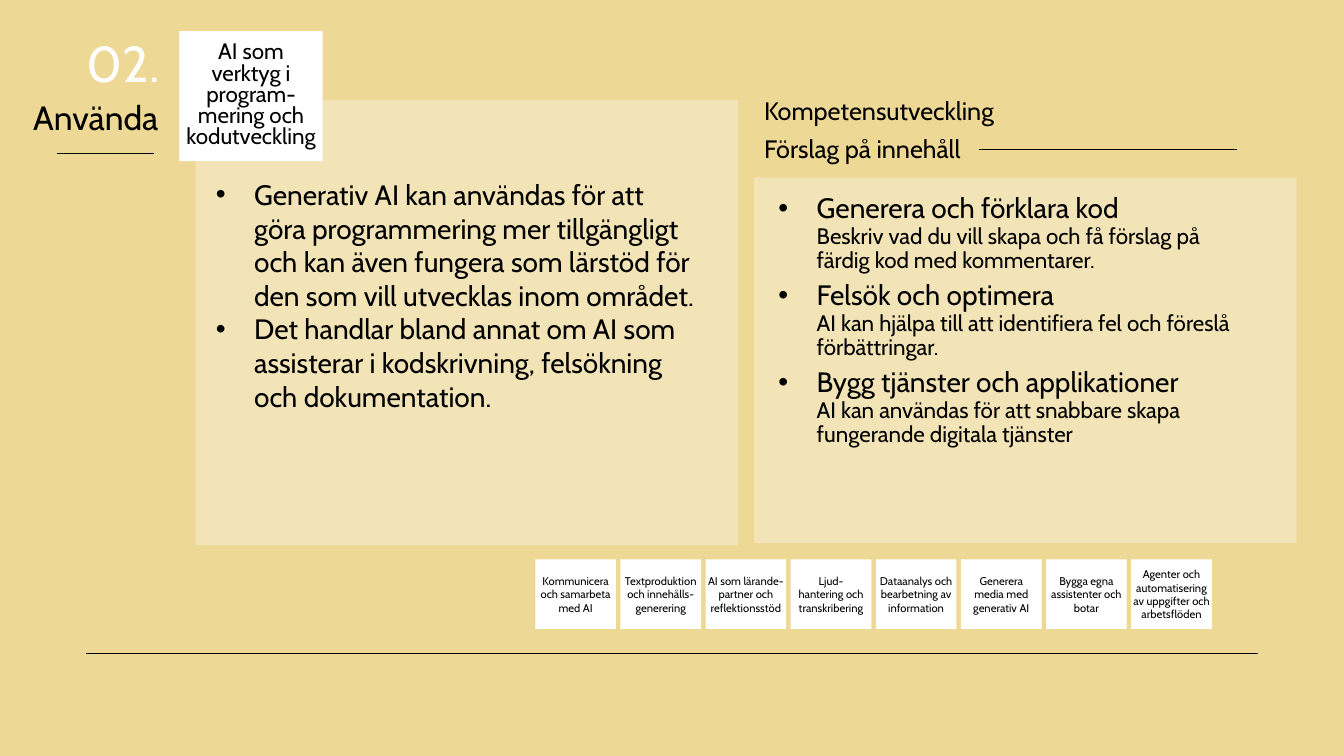
from copy import deepcopy

from lxml.etree import SubElement
from pptx import Presentation
from pptx.dml.color import RGBColor
from pptx.enum.shapes import MSO_CONNECTOR, MSO_SHAPE
from pptx.enum.text import MSO_ANCHOR, MSO_AUTO_SIZE, PP_ALIGN
from pptx.oxml.ns import qn
from pptx.util import Inches, Pt

SAND = RGBColor(0xED, 0xD8, 0x96)
WHITE = RGBColor(0xFF, 0xFF, 0xFF)
BLACK = RGBColor(0x00, 0x00, 0x00)
FONT = "Cabin"

USES = [
    "Generativ AI kan användas för att göra programmering mer tillgängligt "
    "och kan även fungera som lärstöd för den som vill utvecklas inom området.",
    "Det handlar bland annat om AI som assisterar i kodskrivning, felsökning "
    "och dokumentation.",
]
TOPICS = [
    "Generera och förklara kod\nBeskriv vad du vill skapa och få förslag på "
    "färdig kod med kommentarer.",
    "Felsök och optimera\nAI kan hjälpa till att identifiera fel och föreslå "
    "förbättringar.",
    "Bygg tjänster och applikationer\nAI kan användas för att snabbare skapa "
    "fungerande digitala tjänster",
]
TILES = [
    "Kommunicera och samarbeta med AI",
    "Textproduktion\noch innehålls-generering",
    "AI som lärande-partner och reflektionsstöd",
    "Ljud-\nhantering och transkribering",
    "Dataanalys och bearbetning av information",
    "Generera\nmedia med generativ AI",
    "Bygga egna assistenter och botar",
    "Agenter och automatisering av uppgifter och arbetsflöden",
]


def style(para, sizes, color=BLACK, align=PP_ALIGN.LEFT, lead=1.0):
    """Format the runs of a paragraph, one size for each line."""
    para.alignment = align
    para.line_spacing = lead
    para.space_before = Pt(0)
    for run, size in zip(para.runs, sizes):
        run.font.name = FONT
        run.font.size = Pt(size)
        run.font.color.rgb = color
    for gap in para._p.findall(qn("a:br")):
        gap.insert(0, deepcopy(gap.getprevious().rPr))


def place(shape, left, top, width, height):
    shape.left, shape.top = Inches(left), Inches(top)
    shape.width, shape.height = Inches(width), Inches(height)


def add_rect(slide, left, top, width, height, alpha=None):
    rect = slide.shapes.add_shape(
        MSO_SHAPE.RECTANGLE,
        Inches(left), Inches(top), Inches(width), Inches(height))
    rect.shadow.inherit = False
    rect.fill.solid()
    rect.fill.fore_color.rgb = WHITE
    rect.line.fill.background()
    if alpha:
        tint = rect._element.spPr.find(".//" + qn("a:srgbClr"))
        SubElement(tint, qn("a:alpha")).set("val", str(alpha * 1000))
    return rect


def add_card(slide, box, text, size, pad=(0, 0), lead=1.0):
    """Add a white box with centred text."""
    card = add_rect(slide, *box)
    frame = card.text_frame
    frame.word_wrap = True
    frame.vertical_anchor = MSO_ANCHOR.MIDDLE
    frame.margin_left = frame.margin_right = Inches(pad[0])
    frame.margin_top = frame.margin_bottom = Inches(pad[1])
    frame.text = text.replace("\n", "\v")
    style(frame.paragraphs[0], [size, size], align=PP_ALIGN.CENTER, lead=lead)


def add_label(slide, box, text, size, color=BLACK, align=PP_ALIGN.LEFT,
              anchor=MSO_ANCHOR.TOP, lead=1.0):
    label = slide.shapes.add_textbox(*map(Inches, box))
    frame = label.text_frame
    frame.word_wrap = False
    frame.vertical_anchor = anchor
    frame.text = text
    style(frame.paragraphs[0], [size], color, align, lead)


def add_rule(slide, start, end, top):
    rule = slide.shapes.add_connector(
        MSO_CONNECTOR.STRAIGHT,
        Inches(start), Inches(top), Inches(end), Inches(top))
    rule.line.color.rgb = BLACK
    rule.line.width = Pt(0.5)
    SubElement(rule._element.spPr, qn("a:effectLst"))


def fill_title(slide, box, text):
    title = slide.shapes.title
    place(title, *box)
    frame = title.text_frame
    frame.text = text
    frame.auto_size = MSO_AUTO_SIZE.NONE
    frame.vertical_anchor = MSO_ANCHOR.TOP
    style(frame.paragraphs[0], [24], align=PP_ALIGN.RIGHT, lead=0.9)


def fill_list(slide, index, box, items, sizes, lead=1.0, gap=0):
    """Fill a body placeholder with bullets and bring it to the front."""
    body = slide.placeholders[index]
    place(body, *box)
    slide.shapes._spTree.append(body._element)
    frame = body.text_frame
    frame.auto_size = MSO_AUTO_SIZE.NONE
    for i, item in enumerate(items):
        para = frame.paragraphs[0] if i == 0 else frame.add_paragraph()
        para.text = item
        props = para._p.get_or_add_pPr()
        props.set("marL", str(Inches(0.38)))
        props.set("indent", str(Inches(-0.38)))
        SubElement(props, qn("a:buChar")).set("char", "•")
        style(para, sizes, lead=lead)
        if i:
            para.space_before = Pt(gap)


def main():
    deck = Presentation()
    deck.slide_width, deck.slide_height = Inches(13.33), Inches(7.5)
    slide = deck.slides.add_slide(deck.slide_layouts[3])
    slide.background.fill.solid()
    slide.background.fill.fore_color.rgb = SAND

    add_rect(slide, 7.48, 1.76, 5.38, 3.63, alpha=31)
    add_rect(slide, 1.94, 0.99, 5.38, 4.42, alpha=31)

    add_label(slide, (0.71, 0.41, 0.97, 0.57), "02.", 36, WHITE,
              PP_ALIGN.RIGHT, MSO_ANCHOR.BOTTOM, 0.9)
    fill_title(slide, (0, 0.96, 1.67, 0.44), "Använda")
    add_label(slide, (7.48, 0.9, 2.54, 0.4), "Kompetensutveckling", 18)
    add_label(slide, (7.48, 1.27, 2.22, 0.4), "Förslag på innehåll", 18)

    fill_list(slide, 1, (2.04, 1.71, 4.97, 3.13), USES, [20])
    fill_list(slide, 2, (7.62, 1.88, 4.93, 3.06), TOPICS, [20, 16], 0.9, 6)

    add_rule(slide, 0.57, 1.53, 1.52)
    add_rule(slide, 9.71, 12.27, 1.48)
    add_rule(slide, 0.85, 12.48, 6.48)

    add_card(slide, (1.78, 0.31, 1.42, 1.29),
             "AI som verktyg i program-mering och kodutveckling", 16,
             (0.04, 0.05), Pt(15.2))
    first, last = 5.31, 11.22
    step = (last - first) / (len(TILES) - 1)
    for i, text in enumerate(TILES):
        add_card(slide, (first + i * step, 5.55, 0.8, 0.69), text, 8)

    deck.save("out.pptx")


if __name__ == "__main__":
    main()
